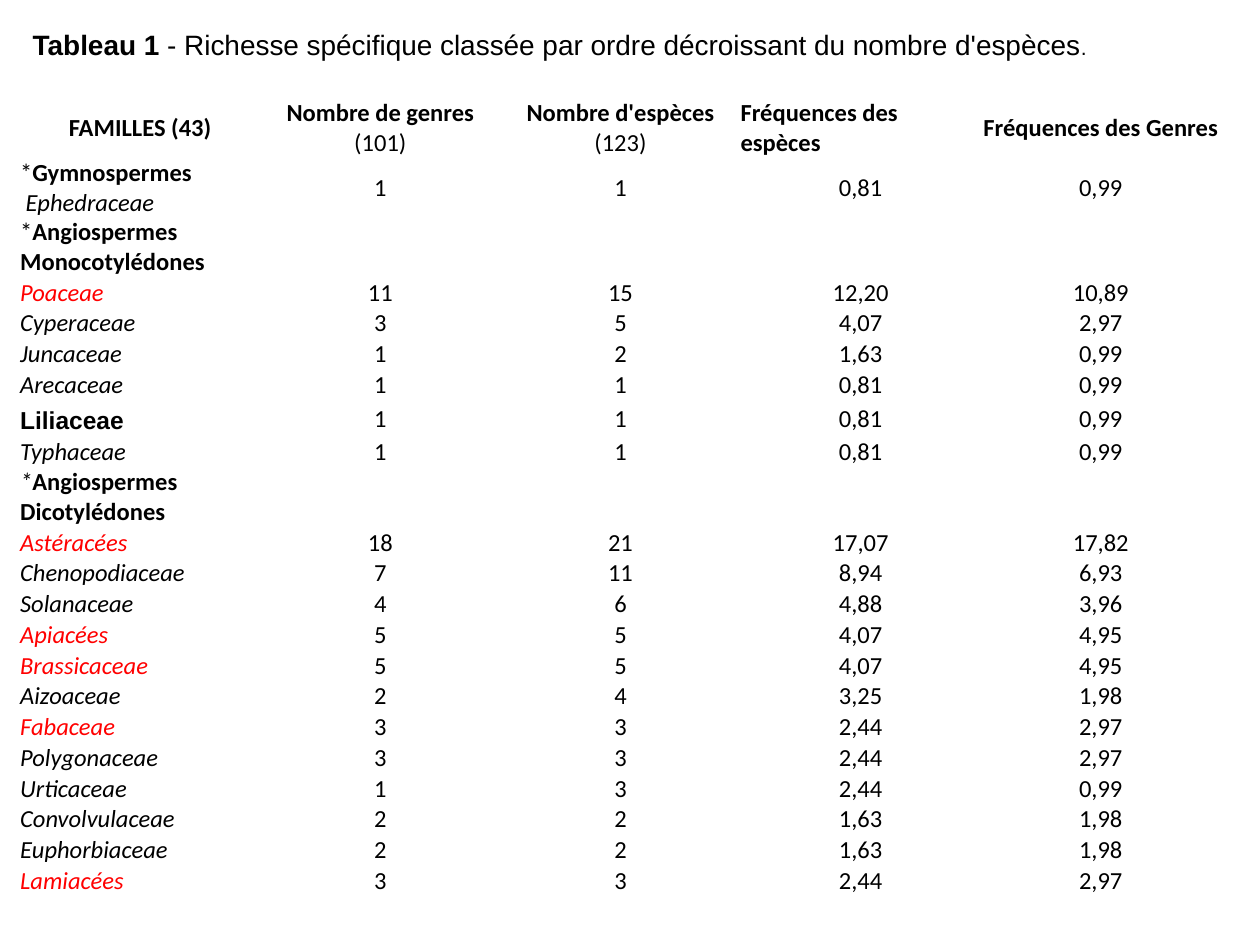
from pptx import Presentation
from pptx.dml.color import RGBColor
from pptx.enum.text import MSO_ANCHOR as Anchor, MSO_AUTO_SIZE as AutoSize, PP_ALIGN as Align
from pptx.util import Inches, Pt

BLACK, RED = "000000", "FF0000"
NO_STYLE = "{2D5ABB26-0587-4C30-8999-92F81FD0307C}"
TALL_ROW, LILY_ROW = Inches(0.47), Inches(0.29)
FAMILY_ROW = Inches(4.15) // 17

HEADERS = [
    ("FAMILLES (43)", ""),
    ("Nombre de genres ", "(101)"),
    ("Nombre d'espèces ", "(123)"),
    ("Fréquences des espèces", ""),
    ("Fréquences des Genres", ""),
]
GROUPS = [
    ("Gymnospermes", [" Ephedraceae|1|1|0,81|0,99"]),
    ("Angiospermes Monocotylédones", [
        "Poaceae|11|15|12,20|10,89",
        "Cyperaceae|3|5|4,07|2,97",
        "Juncaceae|1|2|1,63|0,99",
        "Arecaceae|1|1|0,81|0,99",
        "Liliaceae|1|1|0,81|0,99",
        "Typhaceae|1|1|0,81|0,99",
    ]),
    ("Angiospermes Dicotylédones", [
        "Astéracées|18|21|17,07|17,82",
        "Chenopodiaceae|7|11|8,94|6,93",
        "Solanaceae|4|6|4,88|3,96",
        "Apiacées|5|5|4,07|4,95",
        "Brassicaceae|5|5|4,07|4,95",
        "Aizoaceae|2|4|3,25|1,98",
        "Fabaceae|3|3|2,44|2,97",
        "Polygonaceae|3|3|2,44|2,97",
        "Urticaceae|1|3|2,44|0,99",
        "Convolvulaceae|2|2|1,63|1,98",
        "Euphorbiaceae|2|2|1,63|1,98",
        "Lamiacées|3|3|2,44|2,97",
    ]),
]
RED_FAMILIES = {"Poaceae", "Astéracées", "Apiacées", "Brassicaceae", "Fabaceae", "Lamiacées"}


def rgb(color):
    return RGBColor.from_string(color)


def add_span(para, text, size=14, name="Calibri", color=BLACK, bold=False, italic=False):
    span = para.add_run()
    span.text = text
    font = span.font
    font.size, font.name, font.bold, font.italic = Pt(size), name, bold, italic
    font.color.rgb = rgb(color)


def add_title(page, left, top, width, height):
    title = page.shapes.title
    title.left, title.top, title.width, title.height = left, top, width, height
    frame = title.text_frame
    frame.word_wrap = True
    frame.auto_size = AutoSize.NONE
    frame.vertical_anchor = Anchor.TOP
    frame.margin_left = frame.margin_right = Inches(0.1)
    frame.margin_top = Inches(0.06)
    para = frame.paragraphs[0]
    para.alignment = Align.LEFT
    add_span(para, "Tableau 1", 16, "Arial", bold=True)
    add_span(para, " - Richesse spécifique classée par ordre décroissant du nombre d'espèces",
             16, "Arial")
    add_span(para, ".", 12, "Arial")


def fill_header(row):
    for column, (label, count) in enumerate(HEADERS):
        para = row.cells[column].text_frame.paragraphs[0]
        para.alignment = Align.LEFT if column == 3 else Align.CENTER
        add_span(para, label, bold=True)
        if count:
            add_span(para, count)


def fill_group(row, group):
    para = row.cells[0].text_frame.paragraphs[0]
    add_span(para, "*", italic=group.endswith("Dicotylédones"))
    add_span(para, group, bold=True)


def fill_family(row, para, record):
    family, *values = record.split("|")
    if family == "Liliaceae":
        para.line_spacing = Pt(18)
        add_span(para, family, name="Arial", bold=True)
    else:
        add_span(para, family, color=RED if family in RED_FAMILIES else BLACK, italic=True)
    for column, value in enumerate(values, 1):
        number = row.cells[column].text_frame.paragraphs[0]
        number.alignment = Align.CENTER
        add_span(number, value)


def add_families_table(page, left, top, width, height):
    row_count = 1 + sum(max(1, len(records) + (len(records) > 1)) for _, records in GROUPS)
    table = page.shapes.add_table(row_count, len(HEADERS), left, top, width, height).table
    table._tbl.tblPr.find("{*}tableStyleId").text = NO_STYLE
    table.first_row = table.horz_banding = False
    for column in table.columns:
        column.width = width // len(HEADERS)
    for row in table.rows:
        row.height = FAMILY_ROW
        for cell in row.cells:
            cell.fill.background()
            cell.vertical_anchor = Anchor.MIDDLE
            cell.margin_left = cell.margin_right = cell.margin_top = cell.margin_bottom = 0

    rows = iter(table.rows)
    header = next(rows)
    header.height = TALL_ROW
    fill_header(header)
    for group, records in GROUPS:
        row = next(rows)
        row.height = TALL_ROW
        fill_group(row, group)
        if len(records) == 1:
            fill_family(row, row.cells[0].text_frame.add_paragraph(), records[0])
            continue
        for record in records:
            row = next(rows)
            if record.startswith("Liliaceae"):
                row.height = LILY_ROW
            fill_family(row, row.cells[0].text_frame.paragraphs[0], record)


def main():
    deck = Presentation()
    deck.slide_width, deck.slide_height = Inches(10), Inches(7.5)
    page = deck.slides.add_slide(deck.slide_layouts[5])
    add_families_table(page, Inches(0.16), Inches(0.78), Inches(9.53), Inches(6.28))
    add_title(page, Inches(0.16), Inches(0.16), Inches(9.74), Inches(0.67))
    deck.save("out.pptx")


if __name__ == "__main__":
    main()
